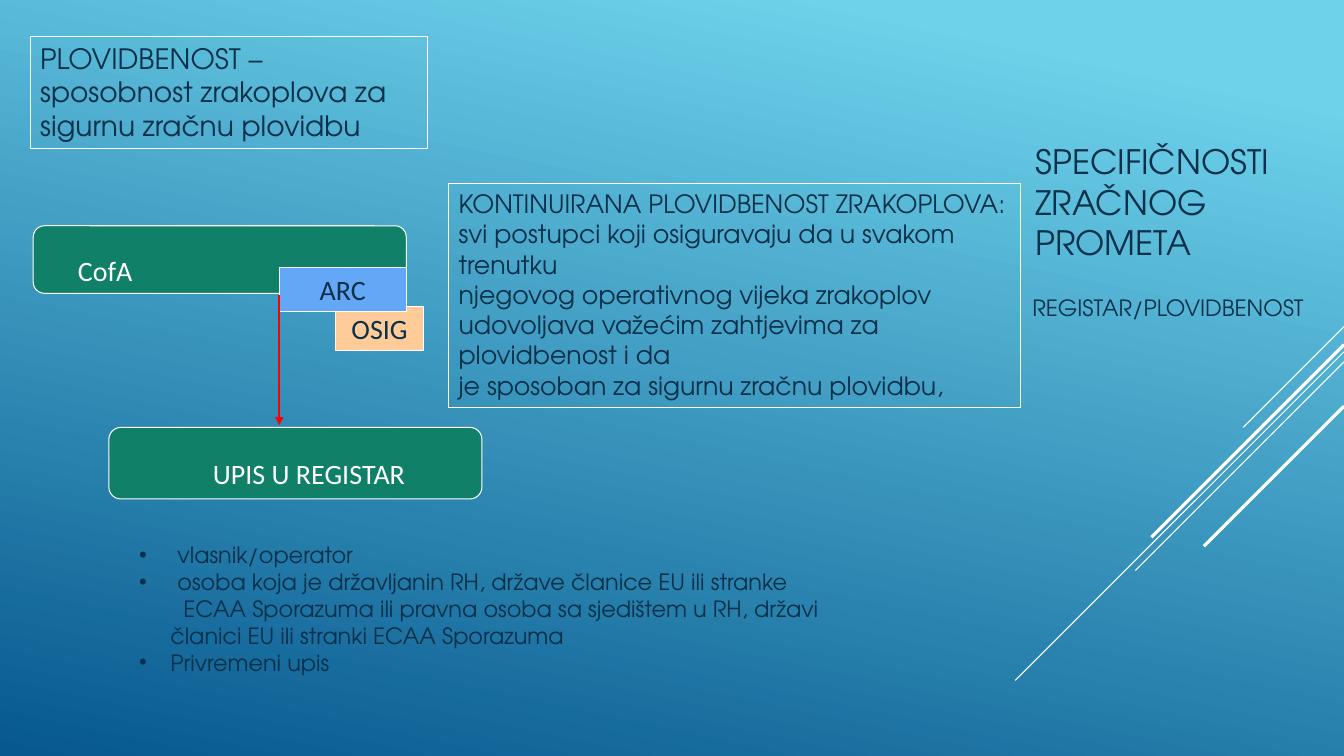
import pptx
import pptx.util
import pptx.dml.color
import pptx.enum.shapes
import pptx.enum.text
import pptx.oxml
import pptx.oxml.ns
import lxml.etree

Inches, Pt = pptx.util.Inches, pptx.util.Pt
SHAPE = pptx.enum.shapes.MSO_SHAPE
ANCHOR = pptx.enum.text.MSO_ANCHOR
ALIGN = pptx.enum.text.PP_ALIGN

# Content
COLORS = {"ink": "0A304A", "white": "FFFFFF", "green": "118069", "orange": "FFCC99",
          "blue": "64A7F7", "red": "FF0000", "sky": "6ED2EB", "deep": "06588E"}
HEADING_FONT, LABEL_FONT = "TeX Gyre Adventor", "Calibri"

TITLE = "SPECIFIČNOSTI ZRAČNOG PROMETA"
SUBTITLE = "REGISTAR/PLOVIDBENOST"

# Text, left indent, first-line indent, bullet
OWNER_LIST = [
    ("vlasnik/operator", 0.38, -0.38, True),
    ("osoba koja je državljanin RH, države članice EU ili stranke", 0.38, -0.38, True),
    ("ECAA Sporazuma ili pravna osoba sa sjedištem u RH, državi članici EU "
     "ili stranki ECAA Sporazuma", 0.31, 0.13, False),
    ("Privremeni upis", 0.31, -0.31, True),
]

# Position, text size, paragraphs
DEFINITIONS = [
    ((4.45, 1.82, 5.67, 2.22), 18, [
        "KONTINUIRANA PLOVIDBENOST ZRAKOPLOVA: svi postupci koji osiguravaju da u svakom trenutku",
        "njegovog operativnog vijeka zrakoplov udovoljava važećim zahtjevima za plovidbenost i da",
        "je sposoban za sigurnu zračnu plovidbu,"]),
    ((0.3, 0.36, 3.94, 1.11), 20, [
        "PLOVIDBENOST – sposobnost zrakoplova za sigurnu zračnu plovidbu"]),
]

# Text, position, outline, fill, text colour, alignment, left and top insets
LABELS = [
    ("CofA", (0.33, 2.24, 3.7, 0.67), SHAPE.ROUNDED_RECTANGLE, "green", "white", ALIGN.LEFT, 0.41, 0.26),
    ("OSIG", (3.33, 3.04, 0.87, 0.44), SHAPE.RECTANGLE, "orange", "ink", ALIGN.CENTER, 0.1, 0.05),
    ("ARC", (2.77, 2.65, 1.26, 0.44), SHAPE.RECTANGLE, "blue", "ink", ALIGN.CENTER, 0.1, 0.05),
    ("UPIS U REGISTAR", (1.08, 4.24, 3.7, 0.71), SHAPE.ROUNDED_RECTANGLE, "green", "white",
     ALIGN.CENTER, 0.37, 0.26),
]

# Diagonals leave the right edge at 45 degrees: start height, run, line width
DIAGONALS = [(3.24, 1.0, 0.75), (3.49, 3.26, 0.75), (3.59, 2.07, 0.75),
             (3.42, 1.91, 2.25), (4.03, 1.39, 2.25)]
RIGHT_EDGE = 13.33


def color(name):
    return pptx.dml.color.RGBColor.from_string(COLORS[name])


def place(shape, box):
    shape.left, shape.top, shape.width, shape.height = map(Inches, box)


def set_frame(shape, anchor, left=0.1, top=0.05):
    frame = shape.text_frame
    frame.word_wrap = True
    frame.auto_size = pptx.enum.text.MSO_AUTO_SIZE.NONE
    frame.vertical_anchor = anchor
    frame.margin_left, frame.margin_top = Inches(left), Inches(top)
    frame.margin_right, frame.margin_bottom = Inches(0.1), Inches(0.05)
    return frame


def write(frame, texts, size, ink="ink", font=HEADING_FONT, align=ALIGN.LEFT):
    for index, text in enumerate(texts):
        paragraph = frame.add_paragraph() if index else frame.paragraphs[0]
        paragraph.alignment = align
        paragraph.space_before = paragraph.space_after = Pt(0)
        run = paragraph.add_run()
        run.text = text
        run.font.size, run.font.name = Pt(size), font
        run.font.color.rgb = color(ink)


def set_bullet(paragraph, left, first, bullet):
    properties = paragraph._p.get_or_add_pPr()
    properties.set("marL", str(Inches(left)))
    properties.set("indent", str(Inches(first)))
    qn = pptx.oxml.ns.qn
    if bullet:
        lxml.etree.SubElement(properties, qn("a:buFont")).set("typeface", "Arial")
        lxml.etree.SubElement(properties, qn("a:buChar")).set("char", "•")
    else:
        lxml.etree.SubElement(properties, qn("a:buNone"))


def add_shape(slide, outline, box, fill=None):
    shape = slide.shapes.add_shape(outline, *map(Inches, box))
    shape.shadow.inherit = False
    if fill:
        shape.fill.solid()
        shape.fill.fore_color.rgb = color(fill)
    else:
        shape.fill.background()
    shape.line.color.rgb = color("white")
    shape.line.width = Pt(0.75)
    return shape


def add_line(slide, start, end, ink, width):
    line = slide.shapes.add_connector(pptx.enum.shapes.MSO_CONNECTOR.STRAIGHT,
                                      *map(Inches, start + end))
    line.line.color.rgb = color(ink)
    line.line.width = Pt(width)
    lxml.etree.SubElement(line._element.spPr, pptx.oxml.ns.qn("a:effectLst"))
    return line


def main():
    presentation = pptx.Presentation()
    presentation.slide_width, presentation.slide_height = Inches(13.33), Inches(7.5)
    slide = presentation.slides.add_slide(presentation.slide_layouts[3])
    title, subtitle, owners = slide.placeholders

    # Background
    background = slide.background.fill
    background.gradient()
    background.gradient_angle = 258
    for stop, position, name in zip(background.gradient_stops, (0.1, 1), ("sky", "deep")):
        stop.position = position
        stop.color.rgb = color(name)

    # Diagonal lines
    for top, run, width in DIAGONALS:
        add_line(slide, (RIGHT_EDGE, top), (RIGHT_EDGE - run, top + run), "white", width)

    # Title and subtitle
    place(title, (10.17, 1.1, 3.19, 1.55))
    write(set_frame(title, ANCHOR.BOTTOM), [TITLE], 24)
    place(subtitle, (10.14, 2.34, 4, 2.29))
    write(set_frame(subtitle, ANCHOR.TOP, top=0.58), [SUBTITLE], 16)
    set_bullet(subtitle.text_frame.paragraphs[0], 0, 0, False)

    # Definitions
    for box, size, texts in DEFINITIONS:
        shape = add_shape(slide, SHAPE.RECTANGLE, box)
        write(set_frame(shape, ANCHOR.TOP), texts, size)

    # Registration flow
    for text, box, outline, fill, ink, align, left, top in LABELS:
        shape = add_shape(slide, outline, box, fill)
        write(set_frame(shape, ANCHOR.MIDDLE, left, top), [text], 20, ink, LABEL_FONT, align)
    arrow = add_line(slide, (2.77, 2.93), (2.77, 4.22), "red", 1.5)
    tail = lxml.etree.SubElement(arrow.line._get_or_add_ln(), pptx.oxml.ns.qn("a:tailEnd"))
    tail.set("type", "triangle")

    # Owner list
    place(owners, (1.28, 5.32, 7.25, 1.45))
    frame = set_frame(owners, ANCHOR.TOP)
    write(frame, [item[0] for item in OWNER_LIST], 16)
    for paragraph, item in zip(frame.paragraphs, OWNER_LIST):
        set_bullet(paragraph, *item[1:])

    presentation.save("out.pptx")


if __name__ == "__main__":
    main()
